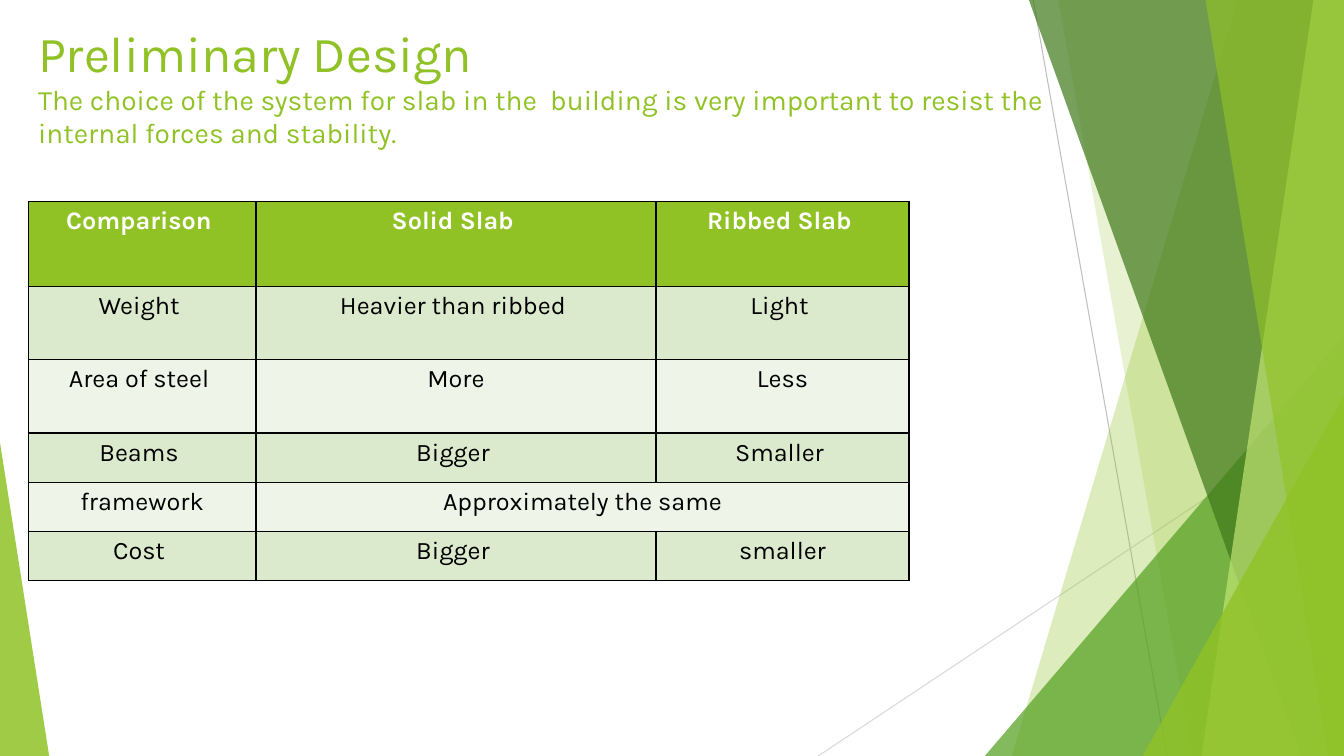
"""Build the Preliminary Design slide comparing solid and ribbed slabs."""
import pptx
import pptx.dml.color
import pptx.enum.shapes
import pptx.enum.text
import pptx.oxml.ns
import pptx.util
from lxml import etree

Cm, Pt, qn = pptx.util.Cm, pptx.util.Pt, pptx.oxml.ns.qn
WIDTH, HEIGHT = 33.87, 19.05
COLOURS = {
    "green": "90C226", "leaf": "54A021", "forest": "3F7819", "lime": "C0E474",
    "band": "DBE9CD", "pale": "EEF4E8", "white": "FFFFFF", "black": "000000",
    "grey": "BFBFBF", "silver": "D9D9D9",
}


def rgb(name):
    return pptx.dml.color.RGBColor.from_string(COLOURS[name])


def style_run(run, size, colour, bold=False):
    run.font.name = "Karla"
    run.font.size = Pt(size)
    run.font.bold = bold
    run.font.color.rgb = rgb(colour)


deck = pptx.Presentation()
deck.slide_width, deck.slide_height = Cm(WIDTH), Cm(HEIGHT)
slide = deck.slides.add_slide(deck.slide_layouts[6])
shapes = slide.shapes

for colour, *ends in [("grey", 26.04, 0, 29.41, HEIGHT), ("silver", WIDTH, 10.24, 20.62, HEIGHT)]:
    ray = shapes.add_connector(pptx.enum.shapes.MSO_CONNECTOR.STRAIGHT, *map(Cm, ends))
    ray.line.color.rgb = rgb(colour)
    ray.line.width = Pt(0.75)
    etree.SubElement(ray._element.spPr, qn("a:effectLst"))

# Panels give top-left and bottom-left x; triangles give left, top, width and apex.
facets = [
    ("green", 30, (31.19, 25.5)),
    ("green", 20, (26.67, 30.05)),
    ("leaf", 72, (24.82, 8.46, 9.05, 1)),
    ("forest", 70, (25.93, 32.79)),
    ("lime", 70, (33.1, 30.28)),
    ("green", 65, (30.38, 33.48)),
    ("green", 80, (28.8, 9.98, 5.07, 1)),
    ("green", 85, (0, 11.15, 1.24, 0)),
]
for colour, opacity, geometry in facets:
    if len(geometry) == 2:
        top_x, bottom_x = geometry
        outline = shapes.build_freeform(Cm(top_x), Cm(0))
        corners = [(WIDTH, 0), (WIDTH, HEIGHT), (bottom_x, HEIGHT)]
        outline.add_line_segments([(Cm(x), Cm(y)) for x, y in corners], close=True)
        facet = outline.convert_to_shape()
    else:
        left, top, width, apex = geometry
        facet = shapes.add_shape(pptx.enum.shapes.MSO_SHAPE.ISOSCELES_TRIANGLE,
                                 Cm(left), Cm(top), Cm(width), Cm(HEIGHT - top))
        facet.adjustments[0] = apex
    facet.shadow.inherit = False
    facet.line.fill.background()
    facet.fill.solid()
    facet.fill.fore_color.rgb = rgb(colour)
    tint = facet._element.spPr.find(qn("a:solidFill")).find(qn("a:srgbClr"))
    etree.SubElement(tint, qn("a:alpha"), val=str(opacity * 1000))

heading = shapes.add_textbox(Cm(0.71), Cm(0.3), Cm(26.14), Cm(3.89)).text_frame
heading.word_wrap = True
heading.margin_top = Cm(0.25)
heading.paragraphs[0].text = (
    "Preliminary Design \vThe choice of the system for slab in the  building is very "
    "important to resist the internal forces and stability."
)
for run, size in zip(heading.paragraphs[0].runs, (36, 20)):
    style_run(run, size, "green")

comparison = [
    ("Comparison ", "Solid Slab ", "Ribbed Slab "),
    ("Weight ", "Heavier than ribbed ", "Light "),
    ("Area of steel ", "More", "Less"),
    ("Beams ", "Bigger ", "Smaller "),
    ("framework", "Approximately the same", ""),
    ("Cost ", "Bigger ", "smaller"),
]
column_widths = [5.74, 10.08, 6.38]
row_heights = [2.13, 1.85, 1.85, 1.24, 1.24, 1.24]
slabs = shapes.add_table(len(comparison), len(column_widths), Cm(0.71), Cm(5.08),
                         Cm(sum(column_widths)), Cm(sum(row_heights))).table
for column, width in zip(slabs.columns, column_widths):
    column.width = Cm(width)
for row, height in zip(slabs.rows, row_heights):
    row.height = Cm(height)
slabs.cell(4, 1).merge(slabs.cell(4, 2))

for r, entries in enumerate(comparison):
    header = r == 0
    background = "green" if header else ("band" if r % 2 else "pale")
    for c, entry in enumerate(entries):
        cell = slabs.cell(r, c)
        cell.fill.solid()
        cell.fill.fore_color.rgb = rgb(background)
        for position, side in enumerate(("a:lnL", "a:lnR", "a:lnT", "a:lnB")):
            border = etree.Element(qn(side), w=str(Pt(1)))
            ink = etree.SubElement(border, qn("a:solidFill"))
            etree.SubElement(ink, qn("a:srgbClr"), val=COLOURS["black"])
            cell._tc.get_or_add_tcPr().insert(position, border)
        if cell.is_spanned:
            continue
        label = cell.text_frame.paragraphs[0]
        label.text = entry
        label.alignment = pptx.enum.text.PP_ALIGN.CENTER
        style_run(label.runs[0], 18, "white" if header else "black", header)

deck.save("out.pptx")
